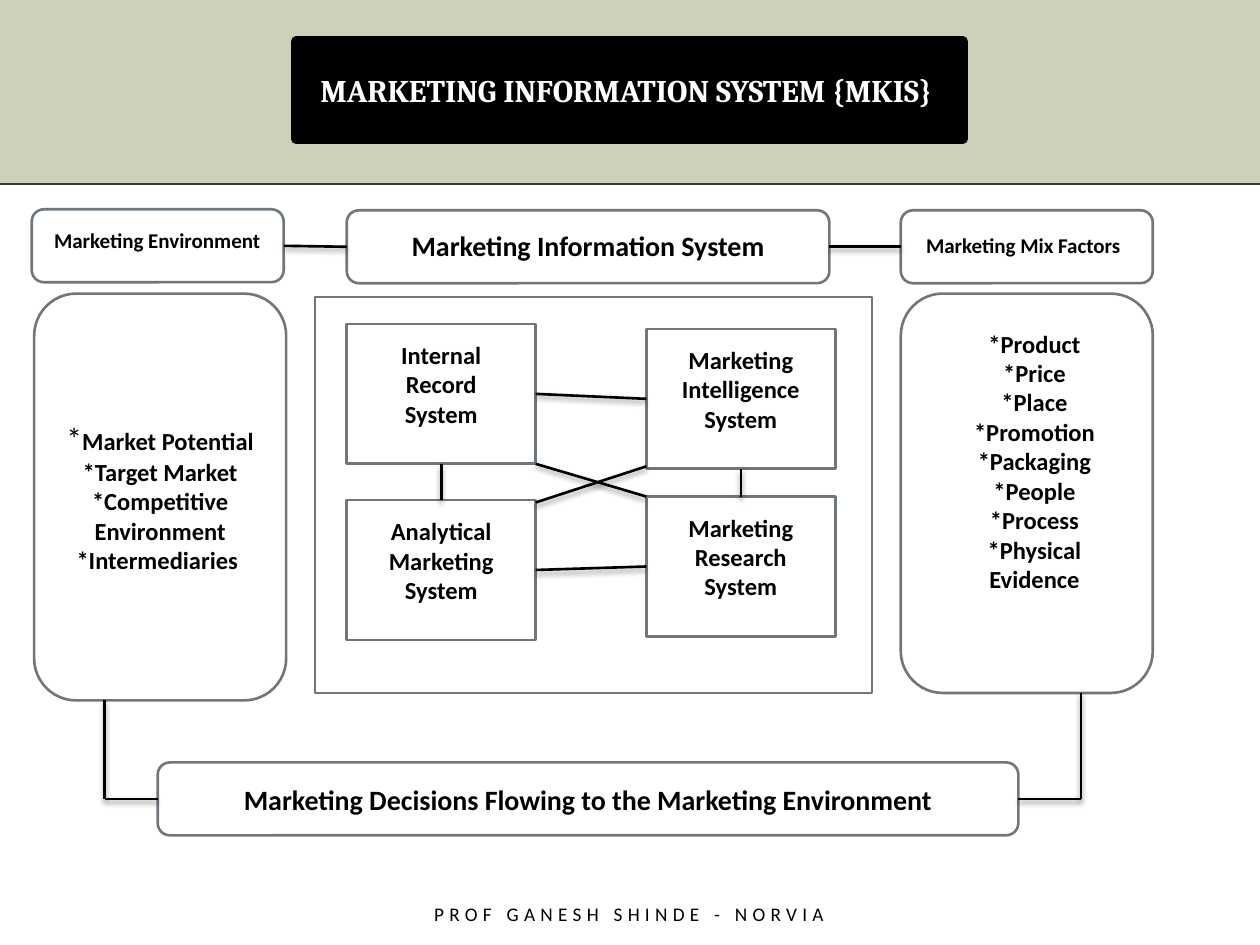
from lxml.etree import SubElement
from pptx import Presentation
from pptx.dml.color import RGBColor
from pptx.enum.shapes import MSO_CONNECTOR as LINK, MSO_SHAPE as SHAPE
from pptx.enum.text import MSO_ANCHOR as ANCHOR, MSO_AUTO_SIZE as AUTO, PP_ALIGN as ALIGN
from pptx.oxml.ns import qn
from pptx.util import Cm, Pt

COLORS = {"sage": "CCD1B9", "rule": "3E3737", "border": "6F777D",
          "ink": "000000", "paper": "FFFFFF"}
TOP, LEFT, BOTTOM, RIGHT = range(4)
SUBSYSTEMS = [
    ("Internal Record System", 0.64, 0.54),
    ("Marketing Intelligence System", 6.68, 0.64),
    ("Analytical Marketing System", 0.64, 4.09),
    ("Marketing Research System", 6.68, 4.02),
]
MIX = ["*Product", "*Price", "*Place", "*Promotion", "*Packaging",
       "*People", "*Process", "*Physical Evidence"]
ENVIRONMENT = ["Market Potential", "*Target Market",
               "*Competitive Environment", "*Intermediaries "]


def color(name):
    return RGBColor.from_string(COLORS[name])


def add_box(slide, box, kind=SHAPE.ROUNDED_RECTANGLE, fill="paper", border="border", width=1.5):
    shape = slide.shapes.add_shape(kind, *map(Cm, box))
    shape.shadow.inherit = False
    shape.fill.solid()
    shape.fill.fore_color.rgb = color(fill)
    if border:
        shape.line.color.rgb = color(border)
        shape.line.width = Pt(width)
    else:
        shape.line.fill.background()
    return shape


def write(shape, lines, size, bold=True, font="Calibri", ink="ink",
          align=ALIGN.CENTER, anchor=ANCHOR.MIDDLE):
    frame = shape.text_frame
    frame.word_wrap = True
    frame.vertical_anchor = anchor
    frame.text = "\n".join(lines)
    for paragraph in frame.paragraphs:
        paragraph.alignment = align
        paragraph.font.name = font
        paragraph.font.size = Pt(size)
        paragraph.font.bold = bold
        paragraph.font.color.rgb = color(ink)
    return frame


def add_caption(slide, box, lines, size, align=ALIGN.CENTER):
    caption = slide.shapes.add_textbox(*map(Cm, box))
    write(caption, lines, size, align=align, anchor=ANCHOR.TOP).auto_size = AUTO.SHAPE_TO_FIT_TEXT


def add_line(slide, start, end, ink="ink", width=1.5, shadow=True):
    """Draw a line; each end is an (x, y) in cm or a (shape, side) to join."""
    joined = [not isinstance(tip[0], (int, float)) for tip in (start, end)]
    points = [(0, 0) if join else tip for join, tip in zip(joined, (start, end))]
    line = slide.shapes.add_connector(LINK.STRAIGHT, *(Cm(v) for point in points for v in point))
    if joined[0]:
        line.begin_connect(*start)
    if joined[1]:
        line.end_connect(*end)
    line.line.color.rgb = color(ink)
    line.line.width = Pt(width)
    effects = SubElement(line._element.spPr, qn("a:effectLst"))
    if shadow:
        outer = SubElement(effects, qn("a:outerShdw"), blurRad=str(Pt(3)), dist=str(Pt(2)),
                           dir="5400000", rotWithShape="0")
        black = SubElement(outer, qn("a:srgbClr"), val=COLORS["ink"])
        SubElement(black, qn("a:alpha"), val="40000")


def add_title_band(slide, width, height, rule_y):
    slide.background.fill.solid()
    slide.background.fill.fore_color.rgb = color("sage")
    add_box(slide, (0, rule_y, width, height - rule_y), SHAPE.RECTANGLE, border=None)
    add_line(slide, (0, rule_y), (width, rule_y), "rule", 1, shadow=False)
    title = add_box(slide, (5.97, 0.84, 13.44, 1.96), SHAPE.RECTANGLE, "ink", "ink", 6)
    frame = write(title, ["MARKETING INFORMATION SYSTEM {MKIS} "], 18, font="Cambria", ink="paper")
    frame.paragraphs[0].space_before = Pt(4)


def add_footer(slide, box):
    footer = slide.shapes.add_textbox(*map(Cm, box))
    frame = write(footer, ["PROF GANESH SHINDE - NORVIA"], 11, bold=False)
    frame.paragraphs[0].runs[0].font._element.set("spc", "300")


def add_heading(slide, box, text, size, inset, drop, align=ALIGN.LEFT):
    left, top, width, height = box
    heading = add_box(slide, box)
    add_caption(slide, (left + inset, top + drop, width - 2 * inset, 0.8), [text], size, align)
    return heading


def add_environment(slide, box):
    frame = write(add_box(slide, box), ENVIRONMENT, 14)
    first = frame.paragraphs[0]
    first.text = "*"
    star = first.runs[0].font
    star.size, star.bold = Pt(18), False
    first.add_run().text = ENVIRONMENT[0]


def add_mix(slide, box):
    left, top = box[:2]
    add_box(slide, box)
    add_caption(slide, (left + 0.69, top + 0.58, 4.01, 5.64), MIX, 14)


def add_subsystems(slide, box, width=3.81, height=2.82):
    """Place the four linked subsystems in a frame."""
    left, top = box[:2]
    add_box(slide, box, SHAPE.RECTANGLE)
    parts = []
    for name, dx, dy in SUBSYSTEMS:
        x, y = left + dx, top + dy
        parts.append(add_box(slide, (x, y, width, height), SHAPE.RECTANGLE))
        add_caption(slide, (x + 0.2, y + 0.2, width - 0.4, 2.06), [name], 14)
    records, intelligence, analytics, research = parts
    for west, east in ((records, intelligence), (analytics, research)):
        add_line(slide, (west, RIGHT), (east, LEFT))
    for lower, upper in ((analytics, records), (research, intelligence)):
        add_line(slide, (lower, TOP), (upper, BOTTOM))
    west_x, east_x = left + 0.64 + width, left + 6.68
    add_line(slide, (west_x, top + 3.36), (east_x, top + 4.02))
    add_line(slide, (east_x, top + 3.41), (west_x, top + 4.14))


def add_decisions(slide, box, environment_bottom, mix_bottom):
    """Place the decisions bar and the lines that rise to both columns."""
    left, top, width, height = box
    bar = add_box(slide, box)
    write(bar, ["Marketing Decisions Flowing to the Marketing Environment"], 16)
    middle = top + height / 2
    for side, x, column_bottom in ((LEFT, left - 1.07, environment_bottom),
                                   (RIGHT, left + width + 1.26, mix_bottom)):
        add_line(slide, (bar, side), (x, middle))
        add_line(slide, (x, middle), (x, column_bottom))


def main():
    deck = Presentation()
    deck.slide_width, deck.slide_height = Cm(25.4), Cm(19.05)
    slide = deck.slides.add_slide(deck.slide_layouts[6])
    add_title_band(slide, 25.4, 19.05, 3.71)

    environment = add_heading(slide, (0.64, 4.22, 5.08, 1.47), "Marketing Environment", 12, 0.2, 0.25)
    system = add_heading(slide, (6.99, 4.24, 9.73, 1.47), "Marketing Information System", 16,
                         0.2, 0.25, ALIGN.CENTER)
    mix = add_heading(slide, (18.16, 4.24, 5.08, 1.47), "Marketing Mix Factors", 12, 0.26, 0.33)
    add_line(slide, (environment, RIGHT), (system, LEFT))
    add_line(slide, (system, RIGHT), (mix, LEFT))

    add_environment(slide, (0.69, 5.92, 5.08, 8.2))
    add_mix(slide, (18.16, 5.92, 5.08, 8.05))
    add_subsystems(slide, (6.35, 5.99, 11.23, 7.98))
    add_decisions(slide, (3.18, 15.37, 17.35, 1.47), 14.12, 13.97)
    add_footer(slide, (4.01, 18.01, 17.35, 0.81))
    deck.save("out.pptx")


if __name__ == "__main__":
    main()
